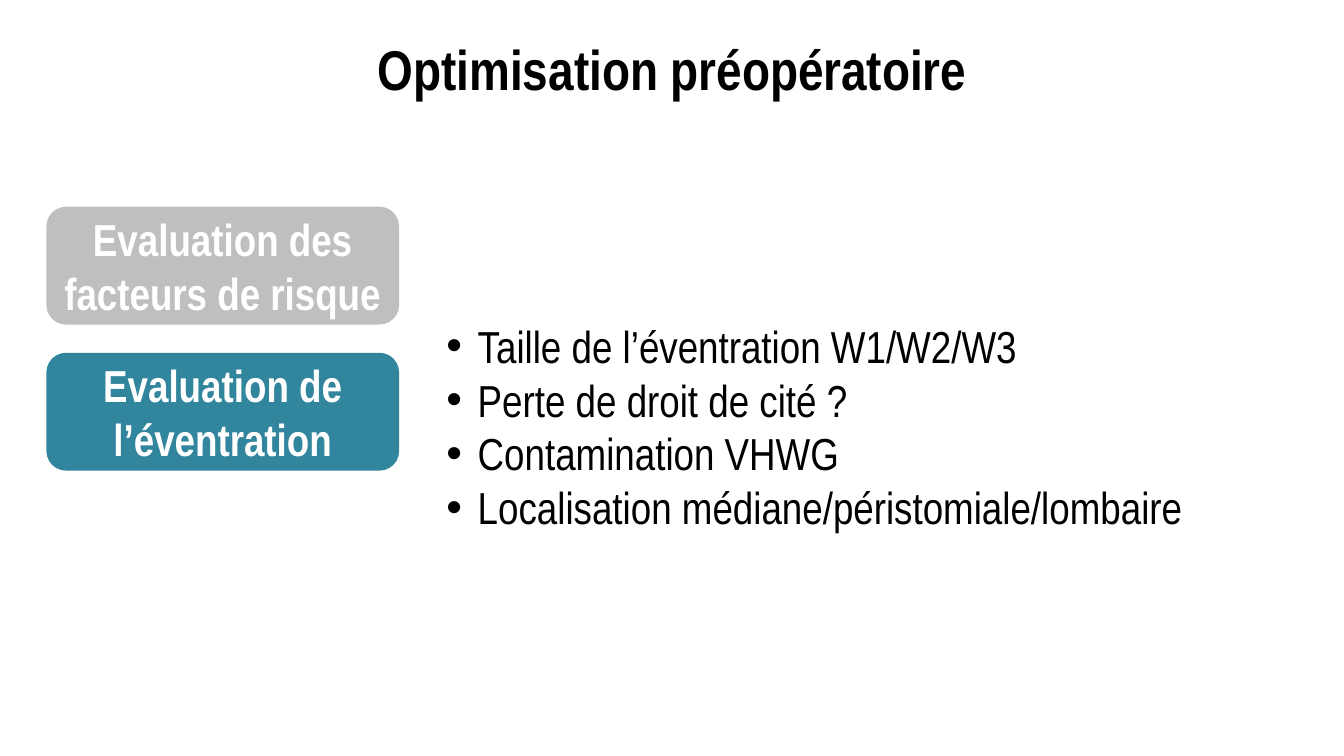
from lxml import etree
from pptx import Presentation
from pptx.dml.color import RGBColor
from pptx.enum.shapes import MSO_SHAPE
from pptx.enum.text import MSO_ANCHOR, PP_ALIGN
from pptx.oxml.ns import qn
from pptx.util import Cm, Pt


def color(value):
    return RGBColor.from_string(value)


def style(paragraph, size, value, bold=False):
    font = paragraph.font
    font.name = "Arial Narrow"
    font.size = Pt(size)
    font.bold = bold
    font.color.rgb = color(value)


presentation = Presentation()
presentation.slide_width = Cm(33.87)
presentation.slide_height = Cm(19.05)
slide = presentation.slides.add_slide(presentation.slide_layouts[6])

title = slide.shapes.add_textbox(Cm(4.24), Cm(0.74), Cm(25.4), Cm(1.96))
title.text_frame.word_wrap = True
paragraph = title.text_frame.paragraphs[0]
paragraph.text = "Optimisation préopératoire"
paragraph.alignment = PP_ALIGN.CENTER
style(paragraph, 40, "000000", bold=True)

steps = [
    ("Evaluation des facteurs de risque", "BFBFBF"),
    ("Evaluation de l’éventration", "31859C"),
]
for index, (label, fill) in enumerate(steps):
    shape = slide.shapes.add_shape(
        MSO_SHAPE.ROUNDED_RECTANGLE,
        Cm(1.17), Cm(5.21 + 3.68 * index), Cm(8.89), Cm(2.97),
    )
    shape.shadow.inherit = False
    shape.fill.solid()
    shape.fill.fore_color.rgb = color(fill)
    shape.line.fill.background()
    shape.text_frame.word_wrap = True
    shape.text_frame.vertical_anchor = MSO_ANCHOR.MIDDLE
    paragraph = shape.text_frame.paragraphs[0]
    paragraph.text = label
    paragraph.alignment = PP_ALIGN.CENTER
    style(paragraph, 32, "FFFFFF", bold=True)

criteria = slide.shapes.add_textbox(Cm(11), Cm(7.9), Cm(22.25), Cm(5.74))
criteria.text_frame.word_wrap = True
criteria.text_frame.text = "\n".join([
    "Taille de l’éventration W1/W2/W3",
    "Perte de droit de cité ?",
    "Contamination VHWG",
    "Localisation médiane/péristomiale/lombaire",
])
for paragraph in criteria.text_frame.paragraphs:
    style(paragraph, 32, "000000")
    properties = paragraph._p.get_or_add_pPr()
    properties.set("marL", str(Cm(0.79)))
    properties.set("indent", str(-Cm(0.79)))
    bullet_font = etree.Element(qn("a:buFont"), typeface="Arial")
    bullet = etree.Element(qn("a:buChar"), char="•")
    properties.insert(0, bullet_font)
    properties.insert(1, bullet)

presentation.save("out.pptx")
